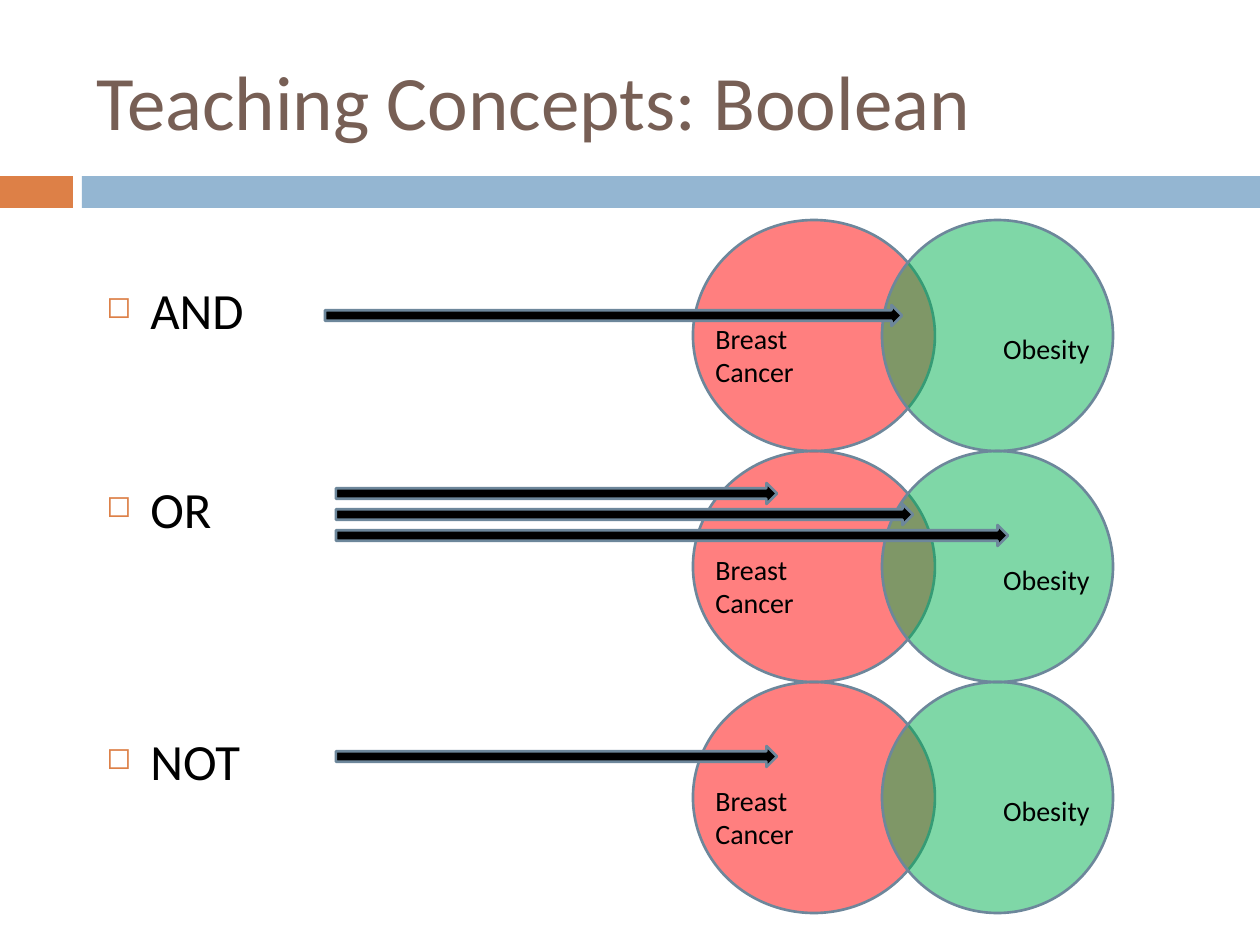
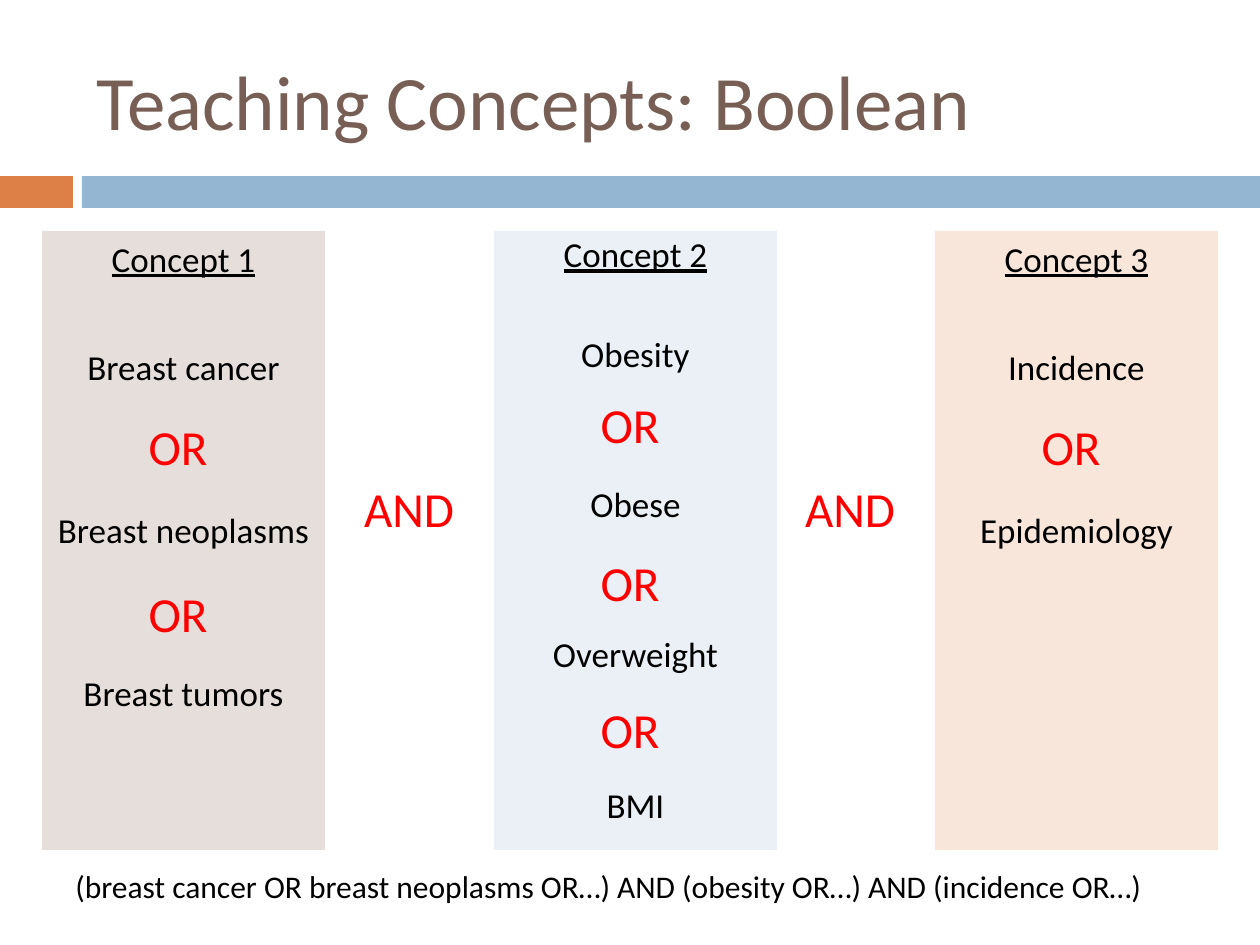
from lxml.etree import SubElement
from pptx import Presentation
from pptx.dml.color import RGBColor
from pptx.enum.shapes import MSO_SHAPE
from pptx.enum.text import MSO_ANCHOR, PP_ALIGN
from pptx.oxml.ns import qn
from pptx.util import Pt

PX = 914400 / 126
FONT = "Calibri"
COLORS = {
    "title": "775F55", "orange": "DD8047", "blue": "94B6D2", "text": "000000",
    "outline": "6D879B", "red": "FF0000", "green": "00B050",
    "taupe": "E6DEDB", "ice": "EAF0F6", "peach": "F8E6DA",
}

ROW_HEIGHT = 231
# operator, its drop in the row, left of its arrows, (drop, length) of each arrow
OPERATORS = [
    ("AND", 53, 231, [(85, 577)]),
    ("OR", 21, 242, [(32, 441), (53, 577), (74, 672)]),
    ("NOT", 42, 242, [(64, 441)]),
]

# left, fill, line spacing, heading, terms, drops of the OR labels
CONCEPTS = [
    (42, "taupe", 1.0, "Concept 1",
     ["Breast cancer", "Breast neoplasms", "Breast tumors"], [179, 346]),
    (494, "ice", 0.9, "Concept 2",
     ["Obesity", "Obese", "Overweight", "BMI"], [157, 315, 462]),
    (935, "peach", 1.0, "Concept 3", ["Incidence", "Epidemiology"], [179]),
]


def px(*lengths):
    return [round(length * PX) for length in lengths]


def rgb(name):
    return RGBColor.from_string(COLORS[name])


def add_span(para, text, size, color="text", underline=False):
    span = para.add_run()
    span.text = text
    span.font.name = FONT
    span.font.size = Pt(size)
    span.font.color.rgb = rgb(color)
    span.font.underline = underline


def add_text(page, box, text, size, color="text", align=PP_ALIGN.LEFT,
             anchor=MSO_ANCHOR.TOP):
    frame = page.shapes.add_textbox(*px(*box)).text_frame
    frame.word_wrap = True
    frame.vertical_anchor = anchor
    para = frame.paragraphs[0]
    para.alignment = align
    add_span(para, text, size, color)
    return para


def add_figure(page, kind, box, fill, outline=None, opacity=100):
    """Add a preset shape; opacity is a percentage."""
    shape = page.shapes.add_shape(kind, *px(*box))
    shape.shadow.inherit = False
    shape.fill.solid()
    shape.fill.fore_color.rgb = rgb(fill)
    if opacity < 100:
        color = shape.fill._xPr.find(".//" + qn("a:srgbClr"))
        SubElement(color, qn("a:alpha"), val=str(opacity * 1000))
    if outline:
        shape.line.color.rgb = rgb(outline)
        shape.line.width = Pt(1.5)
    else:
        shape.line.fill.background()
    return shape


def add_bullet(para):
    props = para._p.get_or_add_pPr()
    indent = px(44)[0]
    props.set("marL", str(indent))
    props.set("indent", str(-indent))
    color = SubElement(props, qn("a:buClr"))
    SubElement(color, qn("a:srgbClr"), val=COLORS["orange"])
    SubElement(props, qn("a:buSzPct"), val="60000")
    SubElement(props, qn("a:buChar"), char="◻")


def add_page(deck, title):
    """Add a blank page with the shared title and band."""
    page = deck.slides.add_slide(deck.slide_layouts[6])
    add_figure(page, MSO_SHAPE.RECTANGLE, (0, 176, 73, 32), "orange")
    add_figure(page, MSO_SHAPE.RECTANGLE, (82, 176, 1178, 32), "blue")
    add_text(page, (84, 32, 1124, 136), title, 44, "title",
             anchor=MSO_ANCHOR.MIDDLE)
    return page


def add_venn(page, left, top):
    for offset, width, fill in [(0, 242, "red"), (189, 231, "green")]:
        add_figure(page, MSO_SHAPE.OVAL, (left + offset, top, width, ROW_HEIGHT),
                   fill, "outline", opacity=50)
    add_text(page, (left + 10, top + 95, 158, 81), "Breast Cancer", 16)
    add_text(page, (left + 262, top + 105, 147, 47), "Obesity", 16,
             align=PP_ALIGN.RIGHT)


def add_operator_row(page, left, top, operator, drop, arrow_left, arrows):
    add_venn(page, left + 599, top)
    add_bullet(add_text(page, (left, top + drop, 577, 73), operator, 29))
    for arrow_drop, length in arrows:
        add_figure(page, MSO_SHAPE.RIGHT_ARROW,
                   (left + arrow_left, top + arrow_drop, length, 21),
                   "text", "outline")


def add_joiner(page, left, top, word):
    add_text(page, (left, top, 168, 72), word, 28, "red", PP_ALIGN.CENTER)


def add_concept(page, left, top, fill, spacing, heading, terms, or_drops):
    panel = add_figure(page, MSO_SHAPE.RECTANGLE, (left, top, 283, 619), fill)
    frame = panel.text_frame
    frame.word_wrap = True
    frame.vertical_anchor = MSO_ANCHOR.TOP
    for index, text in enumerate([heading, *terms]):
        para = frame.add_paragraph() if index else frame.paragraphs[0]
        para.alignment = PP_ALIGN.CENTER
        para.line_spacing = spacing
        if index:
            lines_skipped = min(index, 2)
            para.space_before = Pt(7 + lines_skipped * (24 * spacing + 7))
        add_span(para, text, 20, underline=index == 0)
    for drop in or_drops:
        add_joiner(page, left + 52, top + drop, "OR")


def build_operators(deck):
    page = add_page(deck, "Teaching Concepts: Boolean")
    for index, row in enumerate(OPERATORS):
        add_operator_row(page, 94, 220 + index * ROW_HEIGHT, *row)


def build_concepts(deck):
    page = add_page(deck, "Teaching Concepts: Boolean")
    for left, *concept in CONCEPTS:
        add_concept(page, left, 231, *concept)
    for left in (325, 766):
        add_joiner(page, left, 472, "AND")
    add_text(page, (63, 861, 1144, 50),
             "(breast cancer OR breast neoplasms OR…) AND (obesity OR…) "
             "AND (incidence OR…)", 18)


def main():
    deck = Presentation()
    deck.slide_width, deck.slide_height = px(1260, 945)
    build_operators(deck)
    build_concepts(deck)
    deck.save("out.pptx")


if __name__ == "__main__":
    main()
